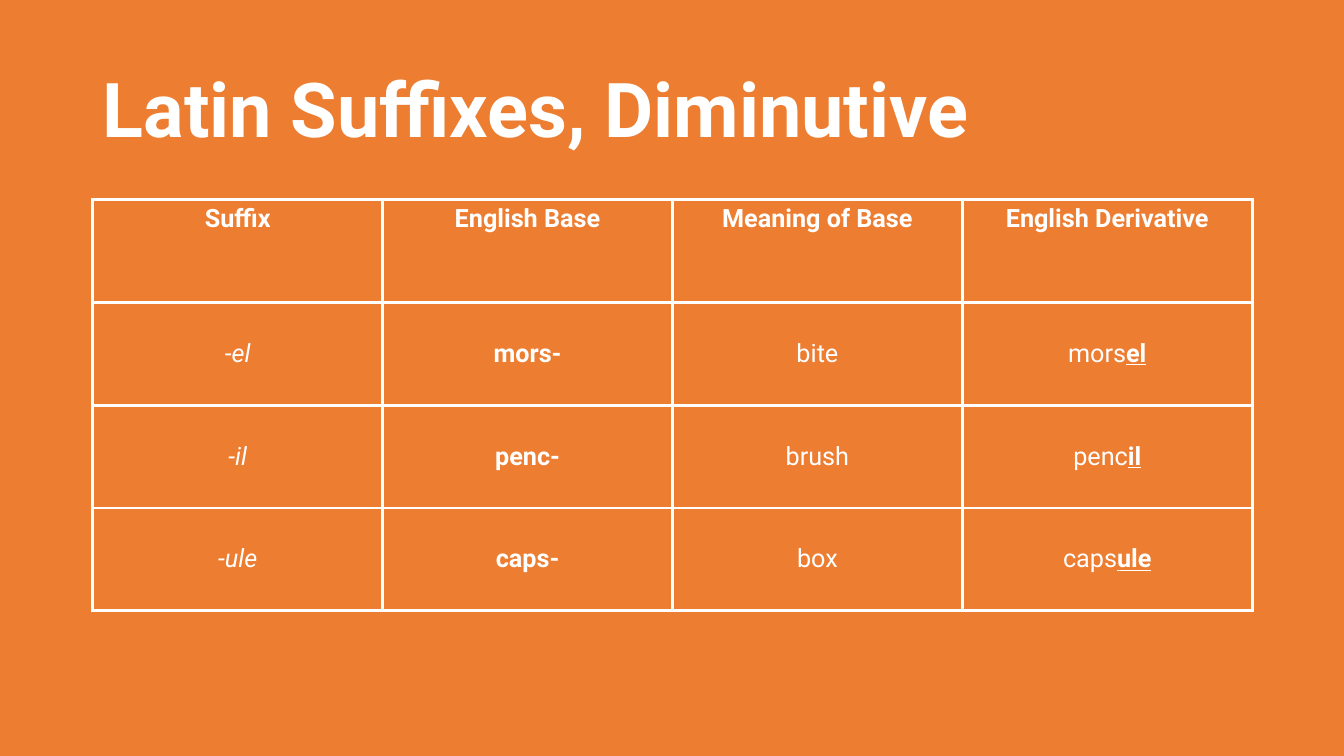
from lxml.etree import SubElement
from pptx import Presentation
from pptx.dml.color import RGBColor
from pptx.enum.text import MSO_ANCHOR as Anchor, PP_ALIGN as Align
from pptx.oxml.ns import qn
from pptx.util import Inches, Pt

TITLE = "Latin Suffixes, Diminutive"
HEADS = ["Suffix", "English Base", "Meaning of Base", "English Derivative"]
WORDS = [
    ("el", "mors", "bite"),
    ("il", "penc", "brush"),
    ("ule", "caps", "box"),
]
FONT = "Roboto"
ORANGE = RGBColor(0xED, 0x7D, 0x31)
WHITE = RGBColor(0xFF, 0xFF, 0xFF)
LEFT, WIDTH = 0.92, 11.5
TOP, ROW = 1.98, 1.02


def add_text(para, text, size=18, bold=False, italic=False, under=False):
    run = para.add_run()
    run.text = text
    font = run.font
    font.name, font.size = FONT, Pt(size)
    font.bold, font.italic, font.underline = bold, italic, under
    font.color.rgb = WHITE


def add_borders(cell):
    props = cell._tc.get_or_add_tcPr()
    for side in ("lnL", "lnR", "lnT", "lnB"):
        line = SubElement(props, qn(f"a:{side}"), w=str(Pt(2.25)))
        fill = SubElement(line, qn("a:solidFill"))
        SubElement(fill, qn("a:srgbClr"), val=str(WHITE))


def fill_cell(cell, parts, anchor):
    add_borders(cell)
    cell.fill.background()
    cell.vertical_anchor = anchor
    para = cell.text_frame.paragraphs[0]
    para.alignment = Align.CENTER
    for text, style in parts:
        add_text(para, text, **style)


def add_title(slide):
    box = slide.shapes.add_textbox(
        Inches(LEFT), Inches(0.4), Inches(WIDTH), Inches(1.45))
    frame = box.text_frame
    frame.word_wrap = True
    frame.vertical_anchor = Anchor.MIDDLE
    para = frame.paragraphs[0]
    para.line_spacing = 0.9
    add_text(para, TITLE, size=54, bold=True)


def add_grid(slide):
    bold, ending = {"bold": True}, {"bold": True, "under": True}
    rows = [[[(head, bold)] for head in HEADS]]
    for suffix, base, sense in WORDS:
        rows.append([
            [(f"-{suffix}", {"italic": True})],
            [(f"{base}-", bold)],
            [(sense, {})],
            [(base, {}), (suffix, ending)],
        ])
    table = slide.shapes.add_table(
        len(rows), len(HEADS), Inches(LEFT), Inches(TOP),
        Inches(WIDTH), Inches(ROW * len(rows))).table
    table.first_row = table.horz_banding = False
    for r, row in enumerate(rows):
        anchor = Anchor.MIDDLE if r else Anchor.TOP
        for c, parts in enumerate(row):
            fill_cell(table.cell(r, c), parts, anchor)


def main():
    deck = Presentation()
    deck.slide_width, deck.slide_height = Inches(13.33), Inches(7.5)
    slide = deck.slides.add_slide(deck.slide_layouts[6])
    back = slide.background.fill
    back.solid()
    back.fore_color.rgb = ORANGE
    add_title(slide)
    add_grid(slide)
    deck.save("out.pptx")


if __name__ == "__main__":
    main()
